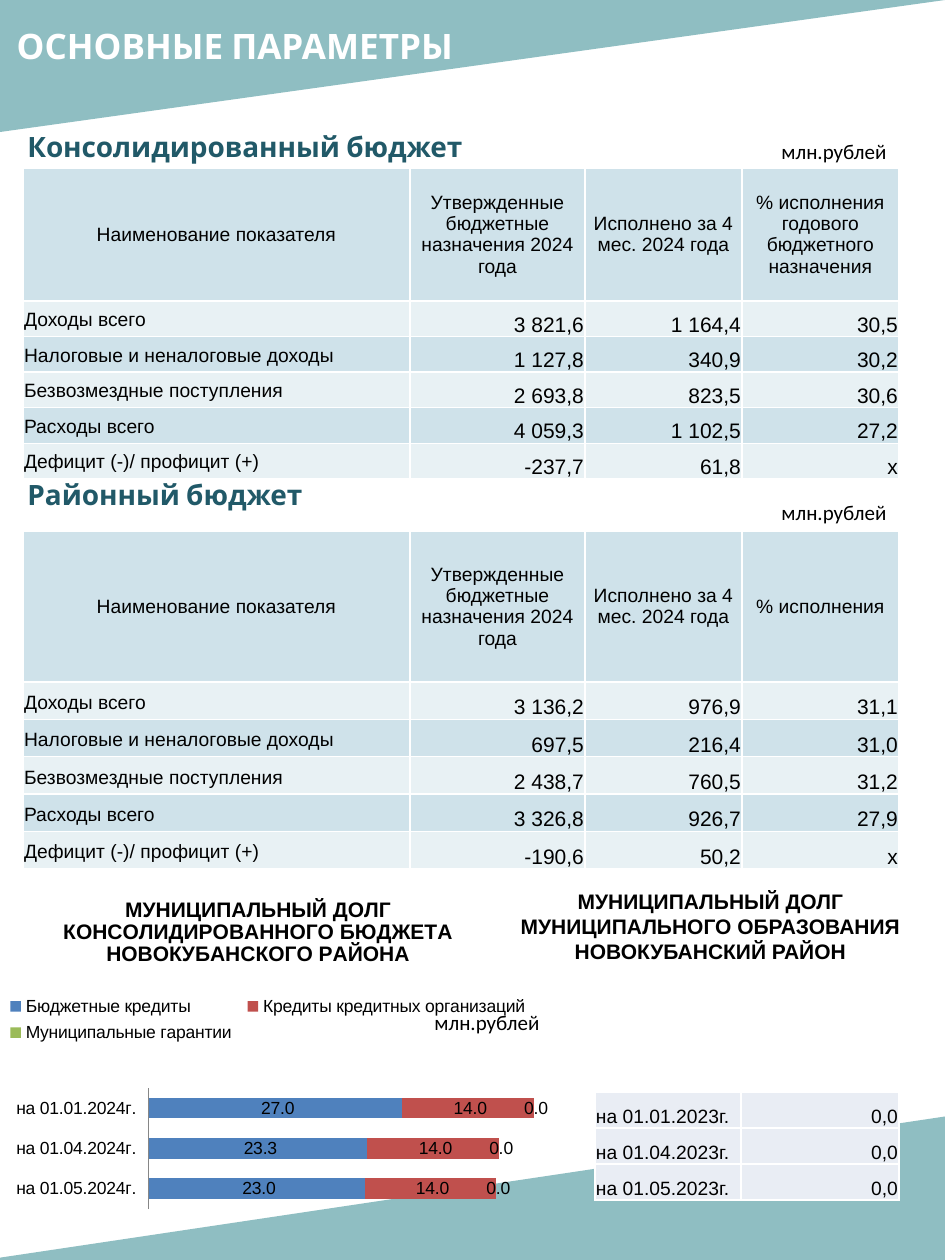
from lxml import etree
from pptx import Presentation
from pptx.chart.data import CategoryChartData
from pptx.dml.color import RGBColor
from pptx.enum.chart import XL_CHART_TYPE, XL_LEGEND_POSITION, XL_TICK_LABEL_POSITION, XL_TICK_MARK
from pptx.enum.shapes import MSO_SHAPE
from pptx.enum.text import MSO_ANCHOR, MSO_AUTO_SIZE, PP_ALIGN
from pptx.oxml.ns import qn
from pptx.util import Pt

LEFT, CENTER, RIGHT = PP_ALIGN.LEFT, PP_ALIGN.CENTER, PP_ALIGN.RIGHT
TOP, MIDDLE, BOTTOM = MSO_ANCHOR.TOP, MSO_ANCHOR.MIDDLE, MSO_ANCHOR.BOTTOM
GROW = MSO_AUTO_SIZE.SHAPE_TO_FIT_TEXT
RIGHT_TRIANGLE = MSO_SHAPE.RIGHT_TRIANGLE
BAR_STACKED = XL_CHART_TYPE.BAR_STACKED
LEGEND_TOP = XL_LEGEND_POSITION.TOP
NO_TICK = XL_TICK_MARK.NONE
LABELS_LOW = XL_TICK_LABEL_POSITION.LOW

PX = 914400 / 126
THEME = {
    "wedge": "519AA0", "wedge_alpha": 64, "border": "FFFFFF", "axis": "868686",
    "band_dark": "CFE2EA", "band_light": "E8F1F4", "guarantee": "E9EDF4",
    "series": ["4F81BD", "C0504D", "9BBB59"],
    "title": (20, "Cabin", "FFFFFF", True),
    "section": (16, "Cabin", "215968", True),
    "unit": (12, "Calibri", "000000", False),
    "debt": (12, "Arial", "000000", True),
    "label": (11, "Arial", "000000", False),
    "amount": (12, "Arial", "000000", False),
    "chart": (10, "Arial", "000000", False),
}


def style(font, role):
    size, font.name, color, font.bold = THEME[role]
    font.size = Pt(size)
    font.color.rgb = RGBColor.from_string(color)


def place(part, index, inner=False, **position):
    for old in part.findall(qn("c:layout")):
        part.remove(old)
    layout = etree.Element(qn("c:layout"))
    manual = etree.SubElement(layout, qn("c:manualLayout"))
    if inner:
        etree.SubElement(manual, qn("c:layoutTarget"), val="inner")
    for axis in ("x", "y"):
        etree.SubElement(manual, qn(f"c:{axis}Mode"), val="edge")
    for key, value in position.items():
        etree.SubElement(manual, qn(f"c:{key}"), val=str(value))
    part.insert(index, layout)


deck = Presentation()
deck.slide_width, deck.slide_height = round(945 * PX), round(1260 * PX)
slide = deck.slides.add_slide(deck.slide_layouts[5])
shapes = slide.shapes

for box, flip in [((0, 0, 945, 132), "flipH"), ((-16, 1116, 964, 144), "flipV")]:
    wedge = shapes.add_shape(RIGHT_TRIANGLE, *(round(v * PX) for v in box))
    wedge.rotation = 180
    wedge._element.spPr.find(qn("a:xfrm")).set(flip, "1")
    wedge.shadow.inherit = False
    wedge.line.fill.background()
    wedge.fill.solid()
    wedge.fill.fore_color.rgb = RGBColor.from_string(THEME["wedge"])
    tint = wedge._element.spPr.find(qn("a:solidFill"))[0]
    etree.SubElement(tint, qn("a:alpha"), val=str(THEME["wedge_alpha"] * 1000))

heading = shapes.title
heading._element.getparent().append(heading._element)

captions = [
    ("ОСНОВНЫЕ ПАРАМЕТРЫ", "title", (4, 18, 614, 54), LEFT, True),
    ("Консолидированный бюджет", "section", (15, 123, 614, 46), LEFT, True),
    ("Районный бюджет", "section", (15, 471, 614, 46), LEFT, True),
    ("млн.рублей", "unit", (769, 132, 130, 38), LEFT, False),
    ("млн.рублей", "unit", (769, 493, 130, 38), LEFT, False),
    ("млн.рублей", "unit", (422, 1003, 130, 38), LEFT, False),
    ("МУНИЦИПАЛЬНЫЙ ДОЛГ МУНИЦИПАЛЬНОГО ОБРАЗОВАНИЯ НОВОКУБАНСКИЙ РАЙОН",
     "debt", (476, 882, 469, 89), CENTER, True),
]
for text, role, box, align, wrap in captions:
    left, top, width, height = (round(v * PX) for v in box)
    caption = heading if role == "title" else shapes.add_textbox(left, top, width, height)
    caption.left, caption.top, caption.width, caption.height = left, top, width, height
    frame = caption.text_frame
    frame.word_wrap, frame.auto_size, frame.vertical_anchor = wrap, GROW, TOP
    paragraph = frame.paragraphs[0]
    paragraph.alignment = align
    run = paragraph.add_run()
    run.text = text
    style(run.font, role)

header = ["Наименование показателя", "Утвержденные бюджетные назначения 2024 года",
          "Исполнено за 4 мес. 2024 года"]
indicators = ["Доходы всего", "Налоговые и неналоговые доходы", "Безвозмездные поступления",
              "Расходы всего", "Дефицит (-)/ профицит (+)"]
consolidated = [("3 821,6", "1 164,4", "30,5"), ("1 127,8", "340,9", "30,2"),
                ("2 693,8", "823,5", "30,6"), ("4 059,3", "1 102,5", "27,2"),
                ("-237,7", "61,8", "х")]
district = [("3 136,2", "976,9", "31,1"), ("697,5", "216,4", "31,0"),
            ("2 438,7", "760,5", "31,2"), ("3 326,8", "926,7", "27,9"),
            ("-190,6", "50,2", "х")]
debt_dates = ["на 01.01.2023г.", "на 01.04.2023г.", "на 01.05.2023г."]
budget_columns = [387, 175, 157, 157]
tables = [
    (23, 168, budget_columns, 133, 311, True,
     [header + ["% исполнения годового бюджетного назначения"]]
     + [[name, *sums] for name, sums in zip(indicators, consolidated)]),
    (23, 531, budget_columns, 151, 338, True,
     [header + ["% исполнения"]]
     + [[name, *sums] for name, sums in zip(indicators, district)]),
    (595, 1092, [146, 158], 36, 108, False, [[date, "0,0"] for date in debt_dates]),
]
for left, top, columns, first_height, total, is_budget, rows in tables:
    grid = shapes.add_table(len(rows), len(columns), round(left * PX), round(top * PX),
                            round(sum(columns) * PX), round(total * PX)).table
    grid.first_row = grid.horz_banding = False
    for column, width in zip(grid.columns, columns):
        column.width = round(width * PX)
    for r, row in enumerate(rows):
        row_height = first_height if r == 0 else (total - first_height) / (len(rows) - 1)
        grid.rows[r].height = round(row_height * PX)
        is_header = is_budget and r == 0
        band = ("band_light" if r % 2 else "band_dark") if is_budget else "guarantee"
        for c, text in enumerate(row):
            cell = grid.cell(r, c)
            roomy = is_header or (is_budget and c == 0)
            cell.margin_left = cell.margin_right = round(PX)
            cell.margin_top = round((6 if roomy else 1) * PX)
            cell.margin_bottom = round(6 * PX) if roomy else 0
            cell.vertical_anchor = MIDDLE if is_header else BOTTOM
            properties = cell._tc.get_or_add_tcPr()
            for side in ("lnL", "lnR", "lnT", "lnB"):
                border = etree.SubElement(properties, qn(f"a:{side}"), w=str(Pt(1)))
                paint = etree.SubElement(border, qn("a:solidFill"))
                etree.SubElement(paint, qn("a:srgbClr"), val=THEME["border"])
            cell.fill.solid()
            cell.fill.fore_color.rgb = RGBColor.from_string(THEME[band])
            paragraph = cell.text_frame.paragraphs[0]
            paragraph.alignment = CENTER if is_header else RIGHT if c else LEFT
            run = paragraph.add_run()
            run.text = text
            style(run.font, "amount" if is_budget and r and c else "label")

debt_data = CategoryChartData(number_format="#\\ ##0.0")
debt_data.categories = ["на 01.01.2024г.", "на 01.04.2024г.", "на 01.05.2024г."]
debt_data.add_series("Бюджетные кредиты", (27, 23.3, 23))
debt_data.add_series("Кредиты кредитных организаций", (14, 14, 14))
debt_data.add_series("Муниципальные гарантии", (0, 0, 0))
debt = shapes.add_chart(BAR_STACKED, 0, round(869 * PX), round(595 * PX), round(391 * PX),
                        debt_data).chart
style(debt.font, "chart")
debt.has_title = True
run = debt.chart_title.text_frame.paragraphs[0].add_run()
run.text = "МУНИЦИПАЛЬНЫЙ ДОЛГ КОНСОЛИДИРОВАННОГО БЮДЖЕТА НОВОКУБАНСКОГО РАЙОНА"
style(run.font, "debt")
debt.has_legend = True
debt.legend.position = LEGEND_TOP
debt.legend.include_in_layout = False

dates, amounts = debt.category_axis, debt.value_axis
dates.reverse_order = True
dates.major_tick_mark = NO_TICK
dates.tick_label_position = LABELS_LOW
dates.format.line.color.rgb = RGBColor.from_string(THEME["axis"])
amounts.visible = False
amounts.has_major_gridlines = False
amounts.minimum_scale, amounts.maximum_scale = 0, 45

bars = debt.plots[0]
bars.gap_width, bars.overlap, bars.vary_by_categories = 95, 100, False
for loan, color in zip(bars.series, THEME["series"]):
    loan.format.fill.solid()
    loan.format.fill.fore_color.rgb = RGBColor.from_string(color)
    labels = loan.data_labels
    labels.show_value = True
    labels.number_format, labels.number_format_is_linked = "#\\ ##0.0", False
    style(labels.font, "chart")

place(debt.chart_title._element, 1, x=0.1, y=0.06)
place(debt.legend._element, 1, x=0, y=0.31, w=0.9, h=0.15)
place(debt._chartSpace.chart.plotArea, 0, inner=True, x=0.25, y=0.56, w=0.71, h=0.31)

deck.save("out.pptx")
